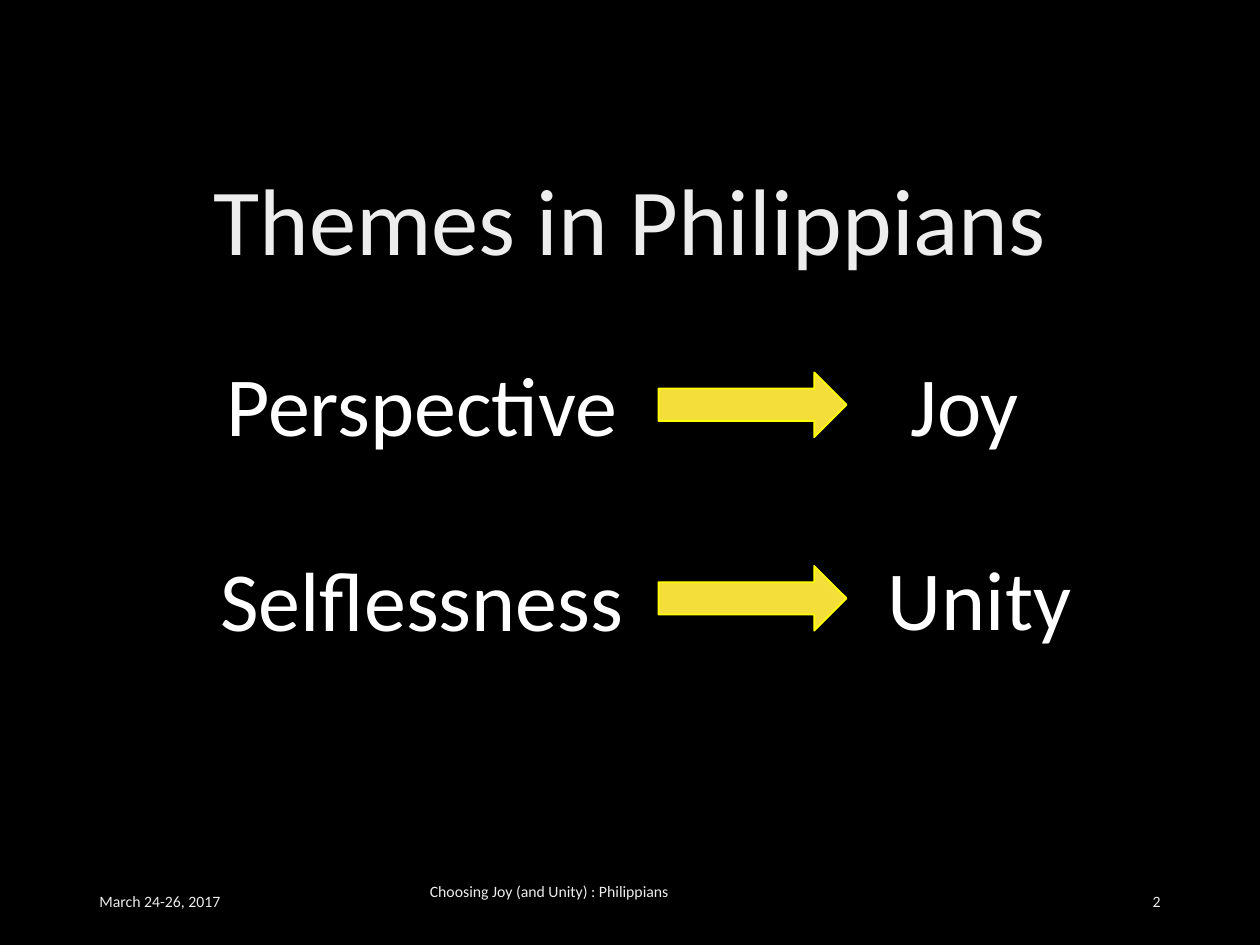
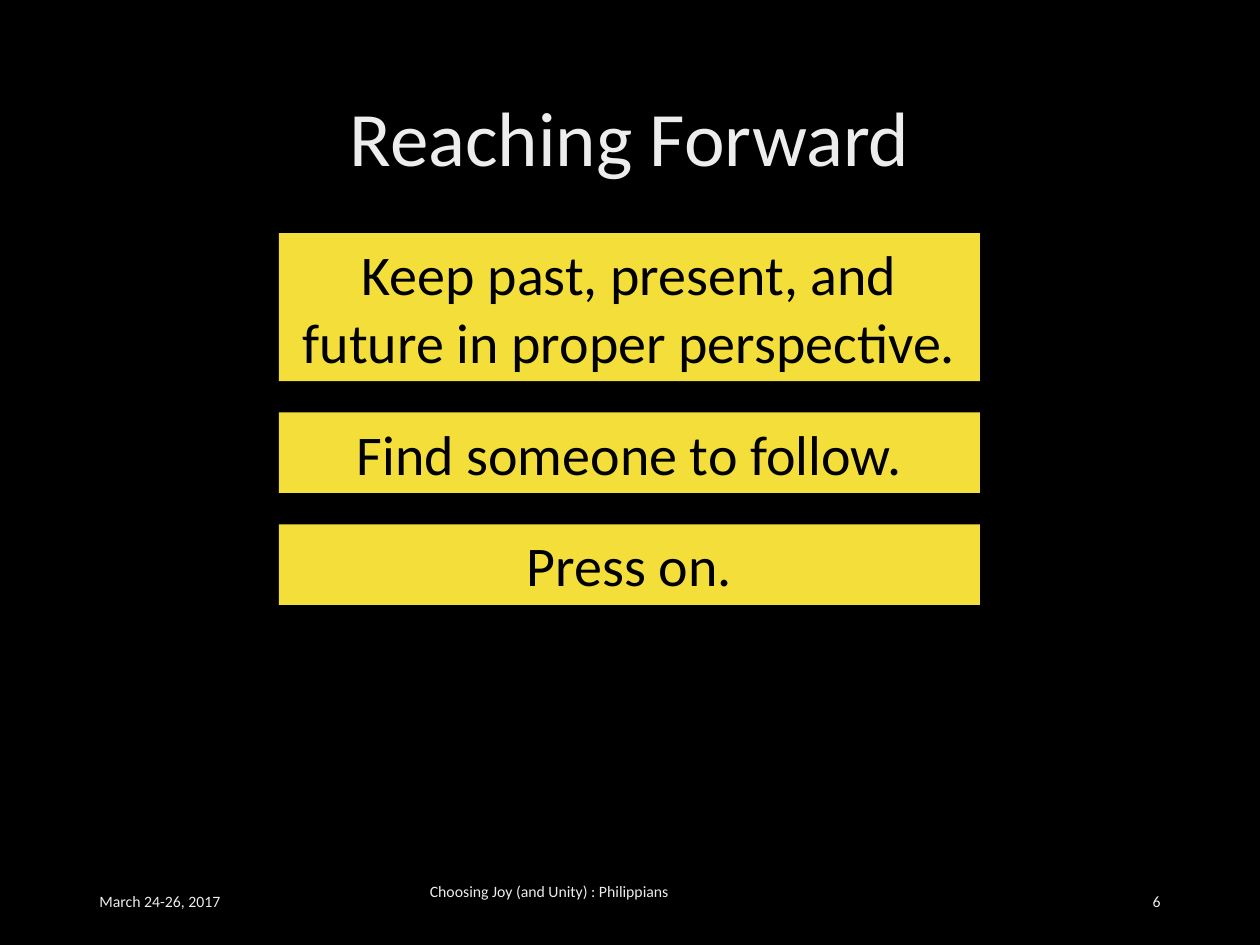
import pptx
import pptx.dml.color
import pptx.enum.shapes
import pptx.enum.text
import pptx.util

Pt = pptx.util.Pt
ALIGN = pptx.enum.text.PP_ALIGN
ANCHOR = pptx.enum.text.MSO_ANCHOR
SHAPE = pptx.enum.shapes.MSO_SHAPE

FONT = "Calibri"
BLACK = "000000"
WHITE = "FFFFFF"
SOFT_WHITE = "EDEDED"
YELLOW = "F4DE3A"
BRIGHT_YELLOW = "FFFF00"

MARGIN = 49.7
CONTENT_WIDTH = 720 - 2 * MARGIN
FOOTER_TOP = 500.5
FOOTER_HEIGHT = 28.8
FOOTER_SIDE_WIDTH = 162


def color(hex_string):
    """Return the colour for a hex string."""
    return pptx.dml.color.RGBColor.from_string(hex_string)


def write(shape, text, size, text_color, alignment, anchor=ANCHOR.MIDDLE, wrap=True):
    """Put one formatted paragraph into a shape and return it."""
    frame = shape.text_frame
    frame.word_wrap = wrap
    frame.vertical_anchor = anchor
    paragraph = frame.paragraphs[0]
    paragraph.text = text
    paragraph.alignment = alignment
    paragraph.font.name = FONT
    paragraph.font.size = Pt(size)
    paragraph.font.color.rgb = color(text_color)
    return paragraph


def add_box(slide, left, top, width, height):
    """Add an empty text box."""
    return slide.shapes.add_textbox(Pt(left), Pt(top), Pt(width), Pt(height))


def add_yellow_shape(slide, kind, left, top, width, height):
    """Add a yellow preset shape without shadow or outline."""
    shape = slide.shapes.add_shape(kind, Pt(left), Pt(top), Pt(width), Pt(height))
    shape.shadow.inherit = False
    shape.fill.solid()
    shape.fill.fore_color.rgb = color(YELLOW)
    shape.line.fill.background()
    return shape


def add_title(slide, text, size, top, height):
    """Add the centred slide title."""
    box = add_box(slide, MARGIN, top, CONTENT_WIDTH, height)
    write(box, text, size, SOFT_WHITE, ALIGN.CENTER).line_spacing = 0.9


def add_footer(slide, number):
    """Add the date, talk name and slide number."""
    right = 720 - MARGIN - FOOTER_SIDE_WIDTH
    parts = [
        ("March 24-26, 2017", MARGIN, FOOTER_SIDE_WIDTH, ALIGN.LEFT, ANCHOR.MIDDLE),
        ("Choosing Joy (and Unity) : Philippians", 238.5, 243, ALIGN.LEFT, ANCHOR.TOP),
        (str(number), right, FOOTER_SIDE_WIDTH, ALIGN.RIGHT, ANCHOR.MIDDLE),
    ]
    for text, left, width, alignment, anchor in parts:
        box = add_box(slide, left, FOOTER_TOP, width, FOOTER_HEIGHT)
        write(box, text, 9, SOFT_WHITE, alignment, anchor)


def add_word(slide, text, left, top, width):
    """Add a large theme word."""
    box = add_box(slide, left, top, width, 63.2)
    frame = box.text_frame
    frame.margin_left = frame.margin_right = Pt(5.2)
    frame.margin_top = frame.margin_bottom = Pt(3.6)
    write(box, text, 48, WHITE, ALIGN.CENTER, ANCHOR.TOP, wrap=False)


def add_arrow(slide, top):
    """Add an arrow from a theme to its result."""
    arrow = add_yellow_shape(slide, SHAPE.RIGHT_ARROW, 376.3, top, 107.5, 37)
    arrow.line.color.rgb = color(BRIGHT_YELLOW)
    arrow.line.width = Pt(1)


def add_points(slide, points, top, gap):
    """Stack yellow panels, each as tall as its number of lines needs."""
    for text, height in points:
        panel = add_yellow_shape(slide, SHAPE.RECTANGLE, 159.4, top, 400.6, height)
        write(panel, text, 32, BLACK, ALIGN.CENTER)
        top += height + gap


def add_slide(presentation, number):
    """Add a black slide with its footer."""
    slide = presentation.slides.add_slide(presentation.slide_layouts[6])
    slide.background.fill.solid()
    slide.background.fill.fore_color.rgb = color(BLACK)
    add_footer(slide, number)
    return slide


def build_themes(presentation):
    """Build the slide of themes and their results."""
    slide = add_slide(presentation, 2)
    add_title(slide, "Themes in Philippians", 54, 89.3, 78.5)
    add_word(slide, "Perspective", 120.2, 198, 242)
    add_word(slide, "Joy", 512, 198, 78.5)
    add_word(slide, "Selflessness", 115.2, 309.6, 252)
    add_word(slide, "Unity", 499.7, 308.9, 120.2)
    for top in (212.8, 323.4):
        add_arrow(slide, top)


def build_reaching_forward(presentation):
    """Build the slide of three closing points."""
    slide = add_slide(presentation, 6)
    add_title(slide, "Reaching Forward", 44, 28.8, 104.4)
    points = [
        ("Keep past, present, and future in proper perspective.", 84.6),
        ("Find someone to follow.", 46),
        ("Press on.", 46),
    ]
    add_points(slide, points, top=133.2, gap=17.9)


def main():
    """Build and save the presentation."""
    presentation = pptx.Presentation()
    presentation.slide_width = Pt(720)
    presentation.slide_height = Pt(540)
    build_themes(presentation)
    build_reaching_forward(presentation)
    presentation.save("out.pptx")


if __name__ == "__main__":
    main()
